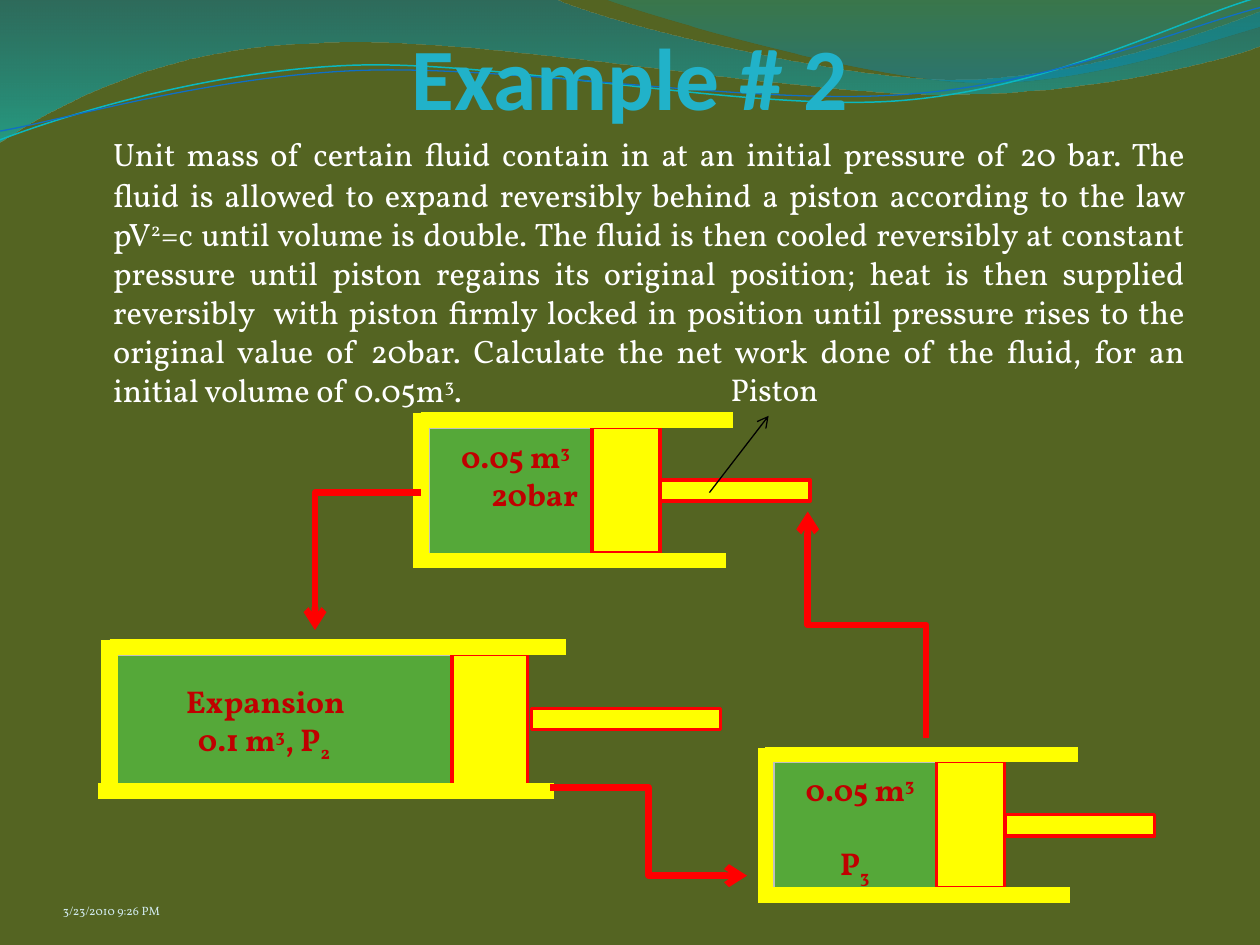
from dataclasses import dataclass
from typing import NamedTuple

from lxml.etree import SubElement
from pptx import Presentation
from pptx.dml.color import RGBColor
from pptx.enum.shapes import MSO_CONNECTOR, MSO_SHAPE
from pptx.enum.text import MSO_ANCHOR, MSO_AUTO_SIZE, PP_ALIGN
from pptx.oxml.ns import qn
from pptx.util import Pt

COLORS = {
    "olive": "546422", "gas": "55A839", "gas edge": "BFBFBF", "metal": "FFFF00",
    "red": "FF0000", "label": "C00000", "title": "21B2C9", "white": "FFFFFF",
    "black": "000000", "date": "D1EAEE", "cyan": "0AB8BF", "blue": "0F6FC6",
    "deep": "0074A1", "aqua": "00C6CF", "teal": "00A1A9", "sky": "008BBF",
}
FONT = "Vollkorn"
SUPER, SUB = 30, -25


class Span(NamedTuple):
    text: str
    baseline: int = 0
    size: float = 18


class Line(NamedTuple):
    spans: list[Span]
    indent: float = 0
    align: PP_ALIGN = PP_ALIGN.LEFT
    before: float = 0
    hanging: float = 0


@dataclass
class Cylinder:
    left: float
    top: float
    label: list[Line]
    bore: tuple[float, float] = (200, 75.6)
    gas_inset: float = 4.3
    gas: tuple[float, float] = (93.6, 76.3)
    piston: tuple[float, float] = (38.9, 72)
    rod_gap: float = 0
    rod: tuple[float, float] = (85.7, 12.2)
    wall: float = 178.6
    overhang: float = 4.3
    end_wall: float = 9
    label_lift: float = 0


def rgb(name: str) -> RGBColor:
    return RGBColor.from_string(COLORS[name])


def write(frame, lines: list[Line], color: str, bold: bool = False, font: str = FONT) -> None:
    for number, line in enumerate(lines):
        para = frame.add_paragraph() if number else frame.paragraphs[0]
        para.alignment = line.align
        para.space_before = Pt(line.before)
        properties = para._p.get_or_add_pPr()
        properties.set("marL", str(Pt(line.indent)))
        properties.set("indent", str(Pt(-line.hanging)))
        for part in line.spans:
            span = para.add_run()
            span.text = part.text
            span.font.name, span.font.size = font, Pt(part.size)
            span.font.bold, span.font.color.rgb = bold, rgb(color)
            if part.baseline:
                span.font._element.set("baseline", str(part.baseline * 1000))


def text_box(page, left: float, top: float, width: float, height: float):
    frame = page.shapes.add_textbox(Pt(left), Pt(top), Pt(width), Pt(height)).text_frame
    frame.word_wrap = True
    return frame


def rectangle(page, left: float, top: float, size: tuple[float, float], fill: str, edge: str = ""):
    box = page.shapes.add_shape(MSO_SHAPE.RECTANGLE, Pt(left), Pt(top), Pt(size[0]), Pt(size[1]))
    box.shadow.inherit = False
    box.fill.solid()
    box.fill.fore_color.rgb = rgb(fill)
    if edge:
        box.line.color.rgb, box.line.width = rgb(edge), Pt(2)
    else:
        box.line.fill.background()
    return box


def connector(page, start, end, color: str, width: float, arrow: bool = False,
              kind=MSO_CONNECTOR.STRAIGHT):
    line = page.shapes.add_connector(kind, *(Pt(value) for value in (*start, *end)))
    line.line.color.rgb, line.line.width = rgb(color), Pt(width)
    if arrow:
        SubElement(line.line._get_or_add_ln(), qn("a:tailEnd"), type="arrow")
    SubElement(line._element.spPr, qn("a:effectLst"))
    return line


def elbow(page, frame, preset: str, turn: int = 0, flip: bool = False, source=None) -> None:
    left, top, width, height = frame
    line = connector(page, (left, top), (left + width, top + height), "red", 3.75, True,
                     MSO_CONNECTOR.ELBOW)
    if source is not None:
        line.begin_connect(source, 1)
    line.left, line.top, line.width, line.height = (Pt(value) for value in frame)
    properties = line._element.spPr
    properties.find(qn("a:prstGeom")).set("prst", preset)
    transform = properties.find(qn("a:xfrm"))
    transform.attrib.clear()
    transform.set("rot", str(turn * 60000))
    transform.set("flipV", str(int(flip)))


def draw_cylinder(page, item: Cylinder):
    left, top = item.left, item.top
    bore = rectangle(page, left, top, item.bore, "olive")
    gas = rectangle(page, left + item.gas_inset, top, item.gas, "gas", "gas edge")
    frame = gas.text_frame
    frame.word_wrap, frame.vertical_anchor = True, MSO_ANCHOR.MIDDLE
    frame.margin_left = frame.margin_right = 0
    frame.margin_bottom = Pt(3.6 + 2 * item.label_lift)
    write(frame, item.label, "label", bold=True)
    # Piston and rod
    piston_left = left + item.gas_inset + item.gas[0]
    rectangle(page, piston_left, top, item.piston, "metal", "red")
    rectangle(page, piston_left + item.piston[0] + item.rod_gap, top + 0.4 * item.bore[1],
              item.rod, "metal", "red")
    # Walls
    roof, floor, outer = top - 4.1, top + item.gas[1], left - item.overhang
    connector(page, (left, roof), (left + item.wall, roof), "metal", 9)
    connector(page, (outer, floor), (outer + item.wall, floor), "metal", 9)
    connector(page, (left, top - 8), (left, floor), "metal", item.end_wall)
    return bore


def trace(page, start, segments, close: bool):
    """Segments hold one point for a line and three for a Bezier curve."""
    points = [(Pt(x), Pt(y)) for segment in segments for x, y in segment]
    builder = page.shapes.build_freeform(Pt(start[0]), Pt(start[1]))
    builder.add_line_segments(points, close=close)
    shape = builder.convert_to_shape()
    shape.shadow.inherit = False
    # Merge each run of three line steps into one curve
    steps = iter(list(shape._element.iter(qn("a:lnTo"))))
    for segment in segments:
        first = next(steps)
        if len(segment) == 3:
            first.tag = qn("a:cubicBezTo")
            for step in (next(steps), next(steps)):
                first.append(step[0])
                step.getparent().remove(step)
    return shape


def wave(page, start, segments, stops) -> None:
    shape = trace(page, start, segments, True)
    shape.line.fill.background()
    shape.fill.gradient()
    shape.fill.gradient_angle = 270
    for stop, (position, color, _) in zip(shape.fill.gradient_stops, stops):
        stop.position, stop.color.rgb = position, rgb(color)
    tones = shape._element.spPr.iter(qn("a:srgbClr"))
    for tone, (_, _, opacity) in zip(list(tones), stops):
        SubElement(tone, qn("a:alpha"), val=str(opacity * 1000))


def ripple(page, start, segments, color: str, width: float) -> None:
    shape = trace(page, start, segments, False)
    shape.fill.background()
    shape.line.color.rgb, shape.line.width = rgb(color), Pt(width)


def main() -> None:
    deck = Presentation()
    deck.slide_width, deck.slide_height = Pt(720), Pt(540)
    page = deck.slides.add_slide(deck.slide_layouts[5])
    page.background.fill.solid()
    page.background.fill.fore_color.rgb = rgb("olive")

    # Waves along the top
    wave(page, (0, 0), [
        [(316.8, -0.7)], [(342.7, 12.2), (478.1, 45.4), (545.8, 45.4)],
        [(614.2, 45.4), (689.8, 18.7), (720, 6.5)], [(720.7, 25.9)],
        [(707.8, 31.7), (626.4, 54.7), (537.1, 54)], [(447.8, 54), (275, 20.2), (185, 24.5)],
        [(92.9, 25.9), (33.1, 59.8), (-0.7, 81.4)]], [(0, "deep", 45), (1, "aqua", 55)])
    wave(page, (344.9, -0.7), [
        [(366.5, 7.9), (491, 44.6), (553.7, 46.8)], [(616.3, 49.7), (691.9, 23), (720, 15.1)],
        [(720, 0)]], [(0, "teal", 30), (0.8, "sky", 45)])
    ripple(page, (0, 79.9), [
        [(34.6, 67), (113.8, 41), (199.4, 37.4)], [(284.4, 33.8), (427, 64.1), (513.4, 57.6)],
        [(599.8, 51.1), (675.4, 10.8), (718.6, -1.4)]], "cyan", 0.85)
    ripple(page, (0, 74.9), [
        [(33.8, 69.1), (118.1, 43.9), (203.8, 40.3)], [(290.2, 36.7), (429.1, 60.5), (516.2, 54)],
        [(601.9, 48.2), (677.5, 15.1), (720, 4.3)]], "blue", 0.75)

    # Title, in front of the waves
    title = page.shapes.title
    title.element.getparent().append(title.element)
    title.left, title.top, title.width, title.height = Pt(36), Pt(0), Pt(648), Pt(73.4)
    frame = title.text_frame
    frame.auto_size, frame.vertical_anchor = MSO_AUTO_SIZE.NONE, MSO_ANCHOR.BOTTOM
    frame.margin_left = frame.margin_right = frame.margin_bottom = 0
    write(frame, [Line([Span("Example # 2", size=50)], align=PP_ALIGN.CENTER)], "title", True, "Calibri")

    # Problem statement and date
    problem = [
        ("Unit mass of certain fluid contain in at an initial pressure of 20 bar. The fluid is allowed "
         "to expand reversibly behind a piston according to the law pV", 0), ("2", SUPER),
        ("=c until volume is double. The fluid is then cooled reversibly at constant pressure until "
         "piston regains its original position; heat is then supplied reversibly  with piston firmly "
         "locked in position until pressure rises to the original value of 20bar. Calculate the net "
         "work done of the fluid, for an initial volume of 0.05m", 0), ("3", SUPER), (". ", 0)]
    spans = [Span("\t", size=24.1), *(Span(*part, size=18.5) for part in problem)]
    write(text_box(page, 36, 67.7, 648, 152),
          [Line(spans, 21.6, PP_ALIGN.JUSTIFY, 4.8, 21.6)], "white")
    frame = text_box(page, 36, 500.4, 167.8, 28.8)
    frame.margin_left = frame.margin_right = frame.margin_top = frame.margin_bottom = 0
    frame.vertical_anchor = MSO_ANCHOR.BOTTOM
    write(frame, [Line([Span("3/23/2010 9:26 PM", SUPER, 12)])], "date")

    # Cylinders in the three states
    volume = Line([Span("0.05 m"), Span("3", SUPER)], 6, PP_ALIGN.CENTER)
    start = draw_cylinder(page, Cylinder(240.5, 244, [
        volume, Line([Span("20bar")], 28, PP_ALIGN.CENTER)], label_lift=10.9))
    draw_cylinder(page, Cylinder(
        62.6, 373.7, [Line([Span("Expansion")], 43.7),
                      Line([Span("0.1 m"), Span("3", SUPER), Span(", P"), Span("2", SUB)], 50.5)],
        bore=(293, 77.8), gas_inset=0, gas=(195.8, 78.5), piston=(43.2, 74.9), rod_gap=2.2,
        rod=(108, 12.2), wall=260.6, overhang=6.5, end_wall=10))
    draw_cylinder(page, Cylinder(437.4, 435.2, [
        volume, Line([Span("P"), Span("3", SUB)], 0, PP_ALIGN.CENTER, 21)]))

    # Piston label and process arrows
    connector(page, (405.4, 281.5), (439.2, 237.6), "black", 0.75, True)
    write(text_box(page, 410.4, 208.1, 73.4, 28.8), [Line([Span("Piston")])], "white")
    elbow(page, (430.6, 323.3, 129.6, 67.7), "bentConnector3", 270, True)
    elbow(page, (314.6, 450, 112.3, 50.4), "bentConnector3")
    elbow(page, (180, 281.5, 60.5, 78.5), "bentConnector2", 180, True, start)

    deck.save("out.pptx")


if __name__ == "__main__":
    main()
